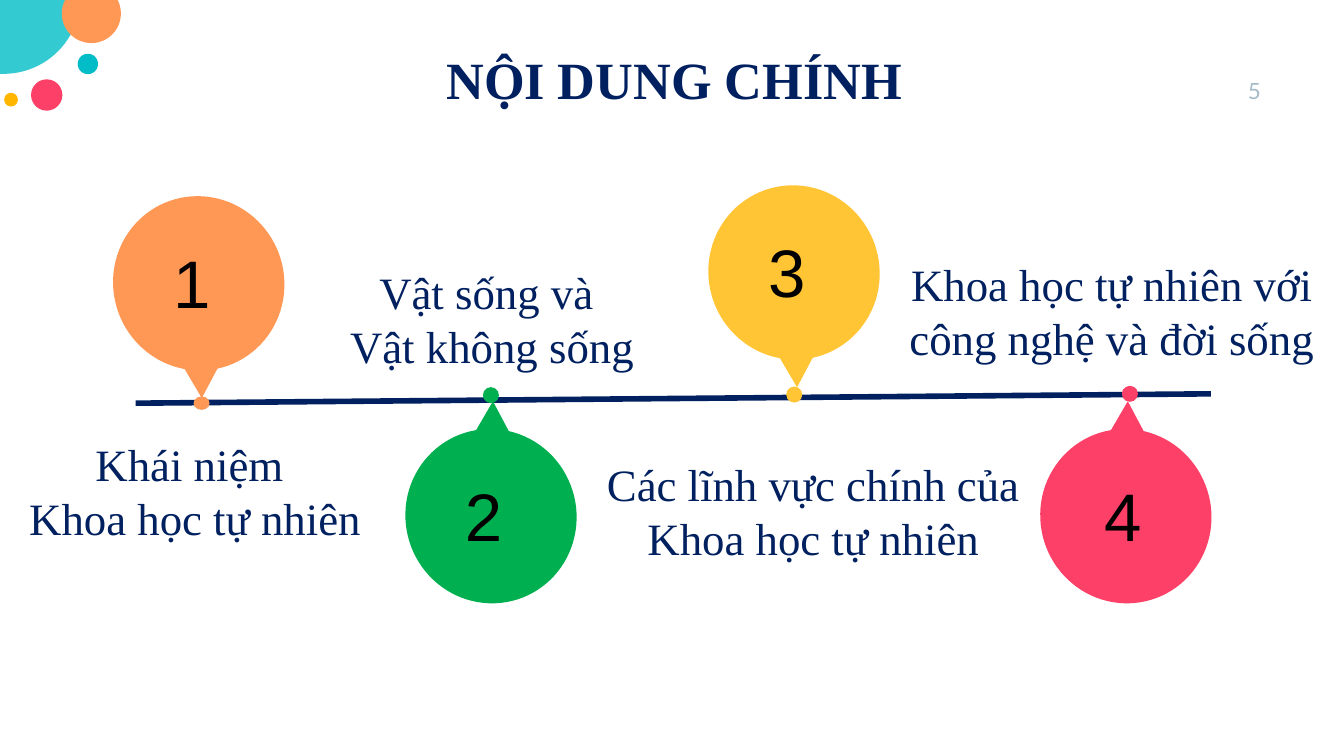
from lxml import etree
from pptx import Presentation
from pptx.dml.color import RGBColor
from pptx.enum.shapes import MSO_CONNECTOR, MSO_SHAPE
from pptx.enum.text import MSO_ANCHOR, PP_ALIGN
from pptx.oxml.ns import qn
from pptx.util import Pt

OVAL, BUBBLE = MSO_SHAPE.OVAL, MSO_SHAPE.OVAL_CALLOUT
STRAIGHT = MSO_CONNECTOR.STRAIGHT
LEFT, CENTER, RIGHT = PP_ALIGN.LEFT, PP_ALIGN.CENTER, PP_ALIGN.RIGHT
MIDDLE = MSO_ANCHOR.MIDDLE

COLORS = {
    "navy": "002060", "orange": "FF9755", "teal": "02BDC7", "pink": "FC4067",
    "amber": "FFB600", "green": "00B050", "yellow": "FFC534",
    "gray": "A6BCC9", "black": "000000",
}
SERIF = "Times New Roman"
TITLE = "NỘI DUNG CHÍNH"
PAGE = "5"

# Corner circles: color, left, top, diameter, opacity in percent
CORNER = [
    ("teal", -39.6, -43.2, 82.8, 80),
    ("orange", 33.1, -8.6, 31.7, 100),
    ("teal", 41.6, 28.8, 10.9, 100),
    ("pink", 16.6, 42.5, 16.8, 100),
    ("amber", 2.2, 49.7, 7.4, 100),
]

# Pins: color, bubble left and top, turn, digit left, dot center, dot height
DOWN, UP = 340.4, 162.9
PINS = [
    ("orange", 60.7, 105, DOWN, 85.7, (108, 216), 7.2),
    ("green", 217.2, 229.7, UP, 242, (263, 211.7), 8.6),
    ("yellow", 379.6, 99.2, DOWN, 404.5, (425.5, 211.4), 8.6),
    ("pink", 557.3, 229.7, UP, 584.5, (605.3, 211), 8.6),
]
BUBBLE_W, BUBBLE_H = 91.6, 93.6
DOT_W = 8.6

# Labels: text, left, top, width
LABELS = [
    ("Khái niệm \nKhoa học tự nhiên", 0.7, 230.4, 207.4),
    ("Vật sống và \nVật không sống", 159.8, 138.2, 207.4),
    ("Các lĩnh vực chính của Khoa học tự nhiên", 317.5, 241.2, 236.2),
    ("Khoa học tự nhiên với công nghệ và đời sống", 477.4, 133.9, 236.2),
]


def color(name):
    return RGBColor.from_string(COLORS[name])


def add_shape(shapes, kind, name, x, y, w, h):
    shape = shapes.add_shape(kind, Pt(x), Pt(y), Pt(w), Pt(h))
    shape.shadow.inherit = False
    shape.fill.solid()
    shape.fill.fore_color.rgb = color(name)
    shape.line.fill.background()
    return shape


def add_text(shapes, text, x, y, w, h, size, font, name, align, bold=False):
    box = shapes.add_textbox(Pt(x), Pt(y), Pt(w), Pt(h))
    frame = box.text_frame
    frame.word_wrap = True
    frame.text = text
    for para in frame.paragraphs:
        para.alignment = align
        for run in para.runs:
            run.font.size = Pt(size)
            run.font.name = font
            run.font.bold = bold
            run.font.color.rgb = color(name)
    return frame


def add_pin(shapes, digit, name, x, y, turn, digit_x, dot, dot_h):
    """Group a bubble, its digit and its dot on the timeline."""
    parts = shapes.add_group_shape().shapes
    bubble = add_shape(parts, BUBBLE, name, x, y, BUBBLE_W, BUBBLE_H)
    bubble.rotation = turn
    add_text(parts, str(digit), digit_x, y + 20.7, 41, 51, 36, "Arial",
             "black", LEFT)
    cx, cy = dot
    add_shape(parts, OVAL, name, cx - DOT_W / 2, cy - dot_h / 2, DOT_W, dot_h)


def main():
    deck = Presentation()
    deck.slide_width, deck.slide_height = Pt(720), Pt(405)
    shapes = deck.slides.add_slide(deck.slide_layouts[6]).shapes

    for name, x, y, size, opacity in CORNER:
        circle = add_shape(shapes, OVAL, name, x, y, size, size)
        if opacity < 100:
            tint = circle.fill._xPr.find(".//" + qn("a:srgbClr"))
            etree.SubElement(tint, qn("a:alpha"), val=str(opacity * 1000))

    page = add_text(shapes, PAGE, 639.4, 33.1, 43.2, 31, 12, "Lato", "gray",
                    RIGHT)
    page.vertical_anchor = MIDDLE
    add_text(shapes, TITLE, 187.2, 21.6, 347.8, 41, 28, SERIF, "navy",
             CENTER, True)

    axis = shapes.add_connector(STRAIGHT, Pt(72.7), Pt(216), Pt(648.7), Pt(211))
    axis.line.color.rgb = color("navy")
    axis.line.width = Pt(3)
    etree.SubElement(axis._element.spPr, qn("a:effectLst"))

    for text, x, y, w in LABELS:
        add_text(shapes, text, x, y, w, 65.5, 24, SERIF, "navy", CENTER)
    for digit, pin in enumerate(PINS, 1):
        add_pin(shapes, digit, *pin)

    deck.save("out.pptx")


if __name__ == "__main__":
    main()
